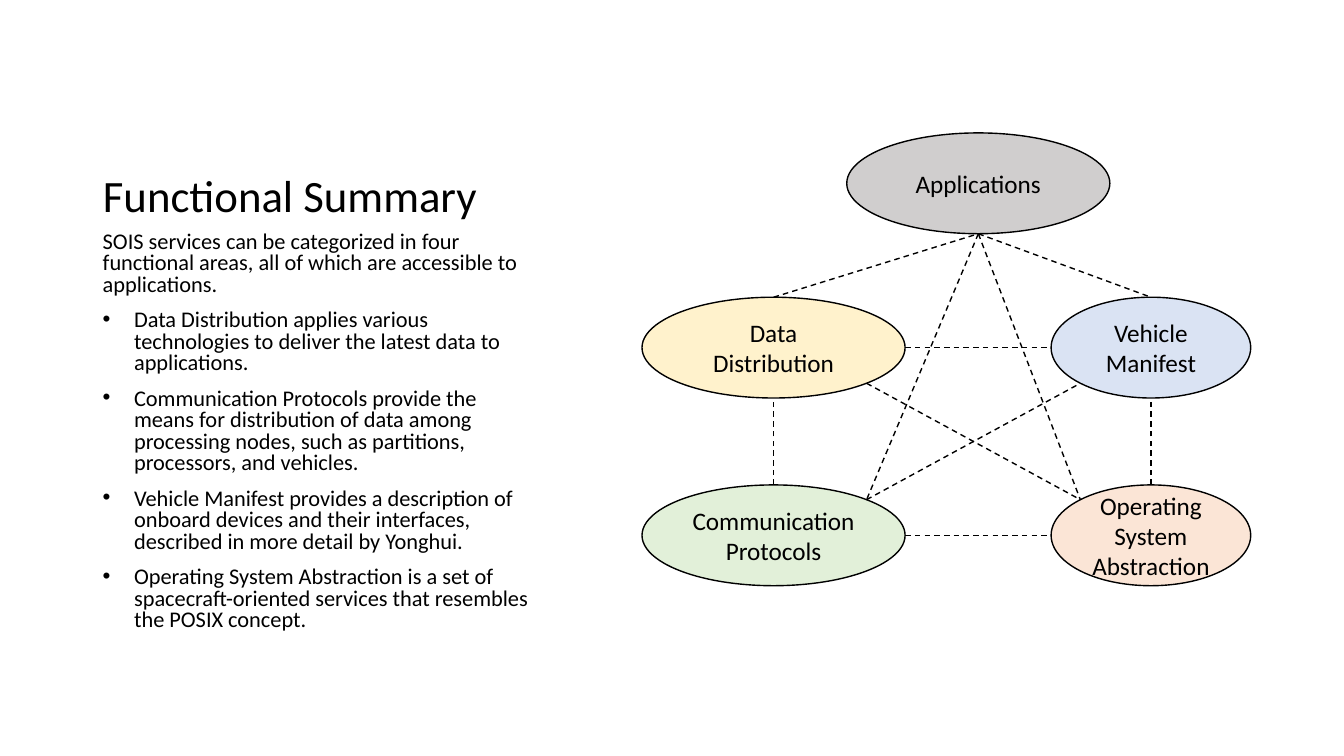
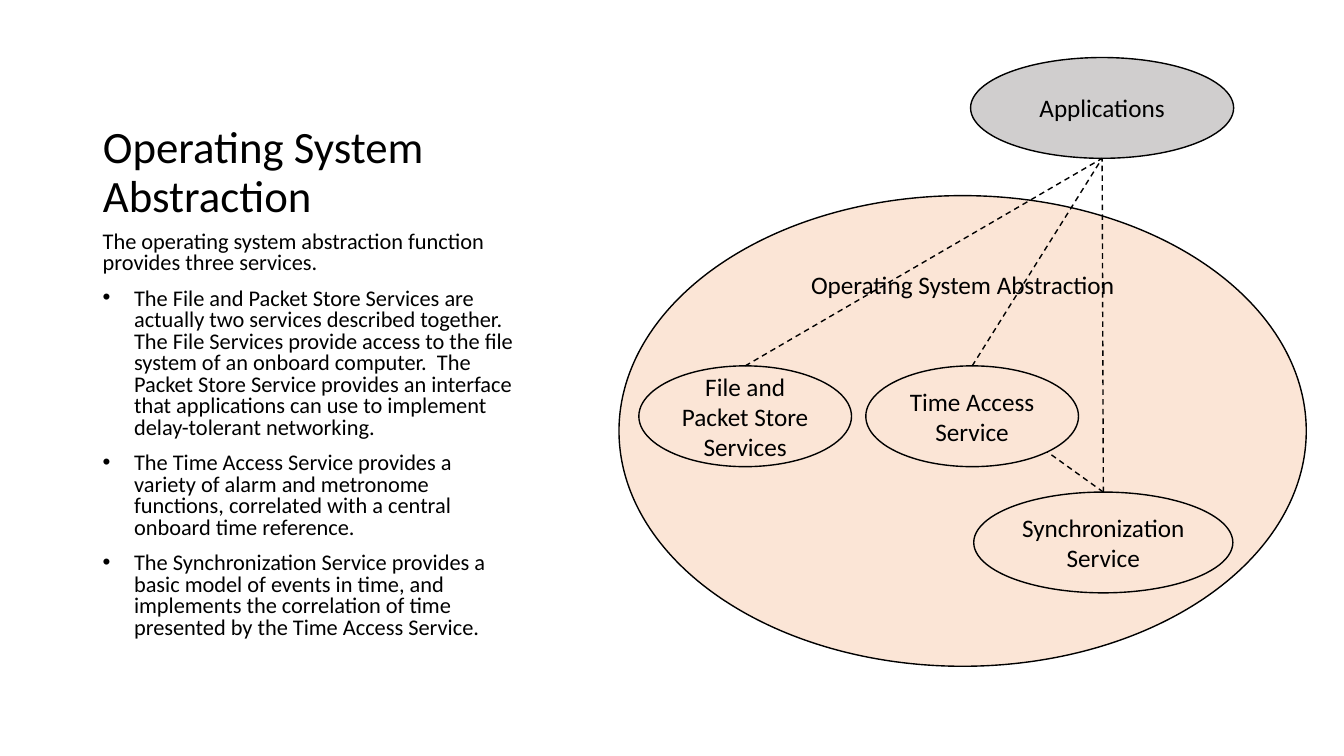
from math import sqrt

from lxml import etree
from pptx import Presentation
from pptx.dml.color import RGBColor
from pptx.enum.dml import MSO_LINE
from pptx.enum.shapes import MSO_CONNECTOR, MSO_SHAPE
from pptx.enum.text import MSO_ANCHOR, MSO_AUTO_SIZE, PP_ALIGN
from pptx.oxml.ns import qn
from pptx.util import Cm, Pt

OVAL = MSO_SHAPE.OVAL
LINE = MSO_CONNECTOR.STRAIGHT
DASH = MSO_LINE.DASH
LEFT, MID = PP_ALIGN.LEFT, PP_ALIGN.CENTER
TOP, CENTER, BASE = MSO_ANCHOR.TOP, MSO_ANCHOR.MIDDLE, MSO_ANCHOR.BOTTOM
FIXED = MSO_AUTO_SIZE.NONE

FONT = "Calibri"
BLACK = RGBColor(0x00, 0x00, 0x00)
GRAY = RGBColor(0xD0, 0xCE, 0xCE)
YELLOW = RGBColor(0xFF, 0xF2, 0xCC)
GREEN = RGBColor(0xE2, 0xF0, 0xD9)
BLUE = RGBColor(0xDA, 0xE3, 0xF3)
PEACH = RGBColor(0xFB, 0xE5, 0xD6)

# Shared layout, in cm
EDGE = 2.34
HEAD = (EDGE, 1.27, 10.92, 4.45)
BODY_TOP, BODY_HIGH = 5.72, 10.59
HIGH = 2.54
INDENT = 0.79

# Connection sites of an oval: number and place as a share of its size
NEAR, FAR = 0.5 - sqrt(2) / 4, 0.5 + sqrt(2) / 4
SITES = {
    "top": (0, 0.5, 0), "top left": (1, NEAR, NEAR),
    "left": (2, 0, 0.5), "low left": (3, NEAR, FAR),
    "low": (4, 0.5, 1), "low right": (5, FAR, FAR),
    "right": (6, 1, 0.5), "top right": (7, FAR, NEAR),
}

# Columns and rows of the ovals
COL_A, COL_B = 16.18, 26.49
ROW_A, ROW_B = 7.49, 12.22
WIDE, SLIM, SMALL = 6.63, 5.03, 5.36
ROW_C = 9.22

# Ovals: key: (text, left, top, width, height, fill, anchor)
# Links: (from, site, to, site)
SLIDES = [
    {
        "title": "Functional Summary",
        "width": 11.46,
        "intro": "SOIS services can be categorized in four functional areas, "
                 "all of which are accessible to applications.",
        "points": [
            "Data Distribution applies various technologies to deliver the "
            "latest data to applications.",
            "Communication Protocols provide the means for distribution of "
            "data among processing nodes, such as partitions, processors, "
            "and vehicles.",
            "Vehicle Manifest provides a description of onboard devices and "
            "their interfaces, described in more detail by Yonghui.",
            "Operating System Abstraction is a set of spacecraft-oriented "
            "services that resembles the POSIX concept.",
        ],
        "ovals": {
            "data": ("Data Distribution", COL_A, ROW_A, WIDE, HIGH, YELLOW, CENTER),
            "comm": ("Communication Protocols", COL_A, ROW_B, WIDE, HIGH, GREEN, CENTER),
            "craft": ("Vehicle Manifest", COL_B, ROW_A, SLIM, HIGH, BLUE, CENTER),
            "system": ("Operating System Abstraction", COL_B, ROW_B, SLIM, HIGH,
                       PEACH, CENTER),
            "apps": ("Applications", 21.34, 3.35, WIDE, HIGH, GRAY, CENTER),
        },
        "links": [
            ("data", "right", "craft", "left"),
            ("comm", "top", "data", "low"),
            ("data", "low right", "system", "top left"),
            ("comm", "top right", "craft", "low left"),
            ("system", "top", "craft", "low"),
            ("comm", "right", "system", "left"),
            ("data", "top", "apps", "low"),
            ("apps", "low", "craft", "top"),
            ("apps", "low", "comm", "top right"),
            ("apps", "low", "system", "top left"),
        ],
    },
    {
        "title": "Operating System Abstraction",
        "width": 10.92,
        "intro": "The operating system abstraction function provides three "
                 "services.",
        "points": [
            "The File and Packet Store Services are actually two services "
            "described together.  The File Services provide access to the "
            "file system of an onboard computer.  The Packet Store Service "
            "provides an interface that applications can use to implement "
            "delay-tolerant networking.",
            "The Time Access Service provides a variety of alarm and "
            "metronome functions, correlated with a central onboard time "
            "reference.",
            "The Synchronization Service provides a basic model of events in "
            "time, and implements the correlation of time presented by the "
            "Time Access Service.",
        ],
        "ovals": {
            "system": ("Operating System Abstraction", 15.6, 4.93, 17.32, 11.86,
                       PEACH, TOP),
            "apps": ("Applications", 24.46, 1.45, WIDE, HIGH, GRAY, CENTER),
            "file": ("File and Packet Store Services", 16.1, ROW_C, SMALL, HIGH,
                     PEACH, CENTER),
            "time": ("Time Access Service", 21.82, ROW_C, SMALL, HIGH, PEACH, CENTER),
            "sync": ("Synchronization Service", 24.54, 12.4, 6.53, HIGH, PEACH, CENTER),
        },
        "links": [
            ("file", "top", "apps", "low"),
            ("time", "top", "apps", "low"),
            ("sync", "top", "apps", "low"),
            ("sync", "top", "time", "low right"),
        ],
    },
]


def write(frame, lines, size=18, align=MID, anchor=CENTER, gap=0, lead=1.0,
          bullets=False):
    """Fill a text frame; with bullets, all lines but the first get one."""
    frame.word_wrap = True
    frame.auto_size = FIXED
    frame.vertical_anchor = anchor
    for num, line in enumerate(lines):
        para = frame.paragraphs[0] if num == 0 else frame.add_paragraph()
        para.alignment = align
        para.line_spacing = lead
        para.space_before = Pt(gap)
        if bullets and num:
            props = para._p.get_or_add_pPr()
            props.set("marL", str(Cm(INDENT)))
            props.set("indent", str(-Cm(INDENT)))
            etree.SubElement(props, qn("a:buFont")).set("typeface", "Arial")
            etree.SubElement(props, qn("a:buChar")).set("char", "•")
        run = para.add_run()
        run.text = line
        run.font.name = FONT
        run.font.size = Pt(size)
        run.font.color.rgb = BLACK


def add_oval(slide, text, left, top, width, high, fill, anchor):
    oval = slide.shapes.add_shape(OVAL, Cm(left), Cm(top), Cm(width), Cm(high))
    oval.shadow.inherit = False
    oval.fill.solid()
    oval.fill.fore_color.rgb = fill
    oval.line.color.rgb = BLACK
    oval.line.width = Pt(1)
    write(oval.text_frame, [text], anchor=anchor)
    return oval


def find_site(oval, site):
    _, across, down = SITES[site]
    return (round(oval.left + oval.width * across),
            round(oval.top + oval.height * down))


def add_link(slide, start, exit_at, end, enter_at):
    link = slide.shapes.add_connector(
        LINE, *find_site(start, exit_at), *find_site(end, enter_at))
    link.line.color.rgb = BLACK
    link.line.width = Pt(1)
    link.line.dash_style = DASH
    etree.SubElement(link._element.spPr, qn("a:effectLst"))
    # Ovals have eight sites, so the joints are set in XML
    joints = link._element.find(".//" + qn("p:cNvCxnSpPr"))
    for tag, oval, site in (("a:stCxn", start, exit_at), ("a:endCxn", end, enter_at)):
        joint = etree.SubElement(joints, qn(tag))
        joint.set("id", str(oval.shape_id))
        joint.set("idx", str(SITES[site][0]))


def add_page(deck, page):
    slide = deck.slides.add_slide(deck.slide_layouts[5])

    # Title and text
    title = slide.shapes.title
    title.left, title.top, title.width, title.height = map(Cm, HEAD)
    write(title.text_frame, [page["title"]], size=32, align=LEFT, anchor=BASE,
          lead=0.9)
    body = slide.shapes.add_textbox(
        Cm(EDGE), Cm(BODY_TOP), Cm(page["width"]), Cm(BODY_HIGH))
    write(body.text_frame, [page["intro"], *page["points"]], size=16, align=LEFT,
          anchor=TOP, gap=10, lead=0.8, bullets=True)

    # Diagram
    ovals = {key: add_oval(slide, *item) for key, item in page["ovals"].items()}
    for start, exit_at, end, enter_at in page["links"]:
        add_link(slide, ovals[start], exit_at, ovals[end], enter_at)


def main():
    deck = Presentation()
    deck.slide_width, deck.slide_height = Cm(33.87), Cm(19.05)
    for page in SLIDES:
        add_page(deck, page)
    deck.save("out.pptx")


if __name__ == "__main__":
    main()
